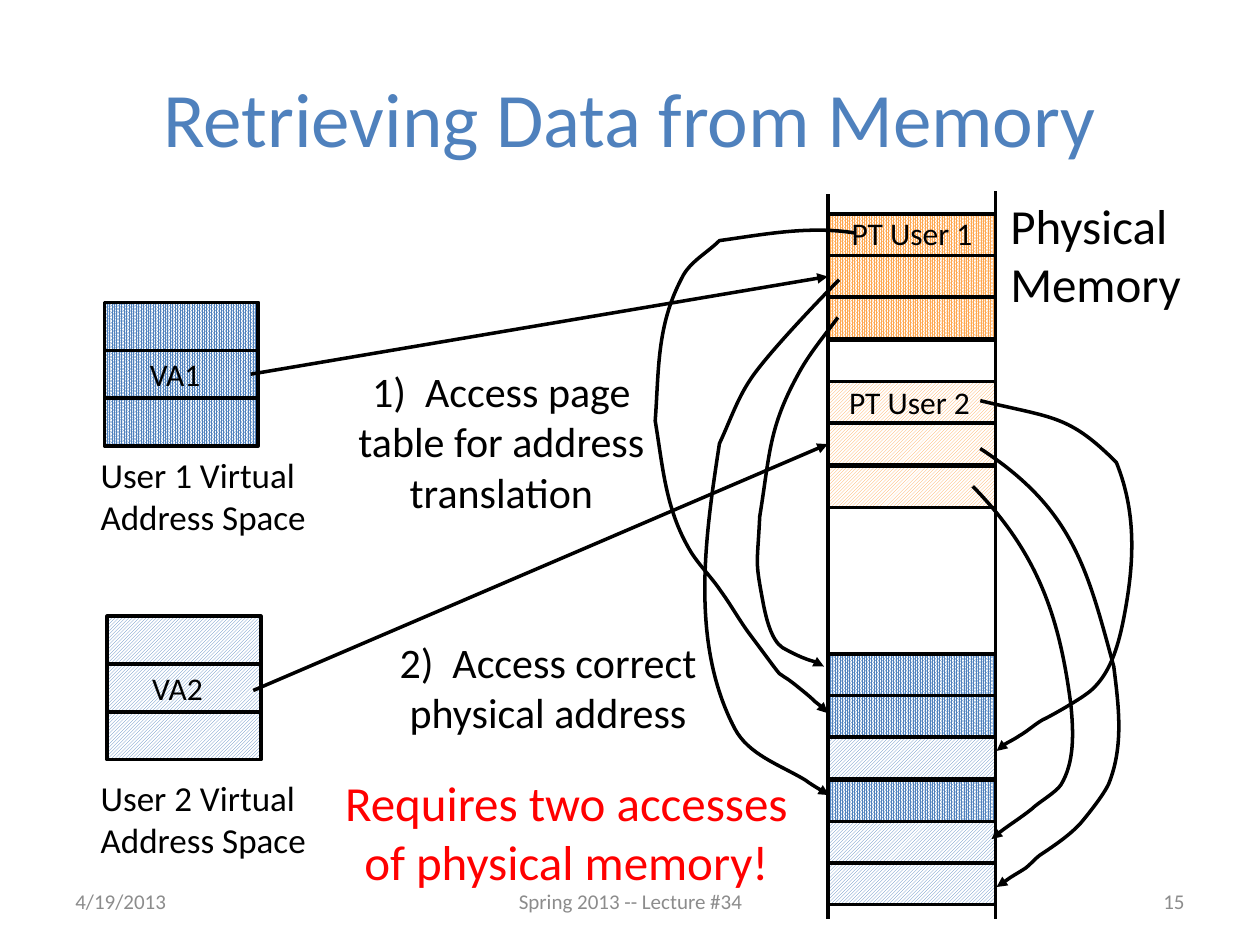
from lxml.etree import SubElement
from pptx import Presentation
from pptx.dml.color import RGBColor
from pptx.enum.dml import MSO_PATTERN
from pptx.enum.shapes import MSO_CONNECTOR, MSO_SHAPE
from pptx.enum.text import MSO_ANCHOR, PP_ALIGN
from pptx.oxml.ns import qn
from pptx.util import Pt

PX = 9144
FONT = "Calibri"
HUES = {
    "blue": "4F81BD",
    "orange": "FFA74F",
    "black": "000000",
    "white": "FFFFFF",
    "red": "FF0000",
    "gray": "8C8C8C",
}
DENSE = MSO_PATTERN.PERCENT_90
STRIPE = MSO_PATTERN.DARK_UPWARD_DIAGONAL
LEFT, MID, RIGHT = PP_ALIGN.LEFT, PP_ALIGN.CENTER, PP_ALIGN.RIGHT

RAM_X, RAM_W, CELL_H = 657, 133, 33
TABLES = [("orange", DENSE)] * 3 + [("white", None)] + [("orange", STRIPE)] * 3
PAGES = [("blue", kind) for kind in (DENSE, DENSE, STRIPE, DENSE, STRIPE, STRIPE)]

CURVES = [
    [(679, 185), (642, 179), (607, 186), (571, 191), (561, 201), (547, 208),
     (541, 221), (521, 259), (523, 294), (520, 334), (526, 370), (528, 402),
     (546, 434), (553, 447), (564, 457), (572, 469), (580, 480), (586, 491),
     (594, 502), (630, 550), (611, 527), (633, 545), (638, 549), (643, 553),
     (647, 557), (651, 560), (657, 566), (657, 566)],
    [(665, 252), (654, 267), (642, 281), (633, 298), (610, 340), (611, 361),
     (603, 410), (601, 451), (599, 443), (606, 480), (608, 490), (612, 508),
     (621, 514), (628, 518), (638, 523), (646, 525), (649, 526), (651, 527),
     (654, 529)],
    [(778, 356), (852, 404), (863, 452), (884, 529), (888, 561), (892, 592),
     (880, 622), (876, 631), (863, 647), (858, 653), (849, 663), (837, 671),
     (825, 679), (821, 682), (818, 686), (814, 689), (808, 693), (802, 696),
     (797, 700), (795, 701), (791, 704), (791, 704)],
    [(778, 318), (836, 332), (848, 329), (886, 367), (903, 409), (900, 451),
     (891, 495), (887, 514), (881, 534), (867, 547), (860, 554), (829, 571),
     (828, 571), (821, 575), (816, 580), (809, 584), (803, 588), (795, 591),
     (791, 596)],
    [(772, 386), (824, 439), (841, 490), (850, 560), (852, 581), (853, 605),
     (842, 623), (838, 629), (824, 637), (819, 642), (809, 650), (797, 657),
     (787, 666)],
    [(666, 222), (651, 237), (607, 283), (595, 302), (585, 317), (579, 335),
     (571, 352), (560, 424), (547, 509), (583, 578), (594, 599), (619, 607),
     (639, 619), (643, 622), (648, 625), (653, 628), (655, 629), (658, 631),
     (658, 631)],
]


def paint(name):
    return RGBColor.from_string(HUES[name])


def ink(shape, head=False):
    shape.line.width = Pt(2)
    shape.line.color.rgb = paint("black")
    if head:
        SubElement(shape.line._ln, qn("a:tailEnd"), type="triangle")


def style(frame, size, hue, align):
    for para in frame.paragraphs:
        para.alignment = align
        for run in para.runs:
            run.font.name = FONT
            run.font.size = Pt(size)
            run.font.color.rgb = paint(hue)


def label(slide, text, box, size, hue="black", align=LEFT, wrap=True, anchor=MSO_ANCHOR.TOP):
    frame = slide.shapes.add_textbox(*(n * PX for n in box)).text_frame
    frame.text = text
    frame.word_wrap = wrap
    frame.vertical_anchor = anchor
    style(frame, size, hue, align)


def block(slide, box, hue, kind=None):
    shape = slide.shapes.add_shape(MSO_SHAPE.RECTANGLE, *(n * PX for n in box))
    shape.shadow.inherit = False
    if kind is None:
        shape.fill.solid()
    else:
        shape.fill.patterned()
        shape.fill.pattern = kind
        shape.fill.back_color.rgb = paint("white")
    shape.fill.fore_color.rgb = paint(hue)
    ink(shape)
    return shape


def rule(slide, start, end, head=False):
    line = slide.shapes.add_connector(
        MSO_CONNECTOR.STRAIGHT, *(n * PX for n in start + end))
    ink(line, head)
    SubElement(line.element.spPr, qn("a:effectLst"))
    return line


def curve(slide, points):
    form = slide.shapes.build_freeform(*points[0], scale=PX)
    form.add_line_segments(points[1:], close=False)
    shape = form.convert_to_shape()
    shape.shadow.inherit = False
    shape.fill.background()
    ink(shape, True)
    track = next(shape.element.iter(qn("a:path")))
    steps = track.findall(qn("a:lnTo"))
    for i in range(0, len(steps), 3):
        bend = SubElement(track, qn("a:cubicBezTo"))
        for step in steps[i:i + 3]:
            bend.append(step[0])
            track.remove(step)


def stack(slide, top, cells):
    return [block(slide, (RAM_X, top + i * 100 // 3, RAM_W, CELL_H), hue, kind)
            for i, (hue, kind) in enumerate(cells)]


def space(slide, left, top, kind, name):
    block(slide, (left, top, 122, 114), "blue", kind)
    for i in (1, 2):
        y = top + 38 * i
        rule(slide, (left, y), (left + 122, y))
    label(slide, name, (left + 26, top + 37, 61, 40), 18, wrap=False)


def main():
    deck = Presentation()
    deck.slide_width, deck.slide_height = 1000 * PX, 750 * PX
    slide = deck.slides.add_slide(deck.slide_layouts[5])

    title = slide.shapes.title
    title.left, title.top, title.width, title.height = (
        n * PX for n in (50, 30, 900, 125))
    title.text_frame.text = "Retrieving Data from Memory"
    title.text_frame.vertical_anchor = MSO_ANCHOR.MIDDLE
    style(title.text_frame, 44, "blue", MID)

    for text, left, width, align in (
        ("4/19/2013", 50, 233, LEFT),
        ("Spring 2013 -- Lecture #34", 342, 317, MID),
        ("15", 717, 233, RIGHT),
    ):
        label(slide, text, (left, 695, width, 40), 12, "gray", align,
              anchor=MSO_ANCHOR.MIDDLE)

    space(slide, 83, 240, DENSE, "VA1")
    space(slide, 85, 489, STRIPE, "VA2")
    label(slide, "User 1 Virtual Address Space", (70, 355, 194, 77), 20)
    label(slide, "User 2 Virtual Address Space", (70, 611, 205, 77), 20)

    rule(slide, (RAM_X, 154), (RAM_X, 729))
    rule(slide, (RAM_X + RAM_W, 152), (RAM_X + RAM_W, 729))
    stack(slide, 519, PAGES)
    cells = stack(slide, 170, TABLES)
    label(slide, "PT User 1", (666, 165, 141, 40), 18)
    label(slide, "PT User 2", (664, 299, 141, 40), 18)

    for start, end, cell in (
        ((199, 297), (657, 220), cells[1]),
        ((201, 548), (657, 353), cells[5]),
    ):
        rule(slide, start, end, True).end_connect(cell, 1)
    for points in CURVES:
        curve(slide, points)

    label(slide, "1)  Access page table for address translation",
          (271, 285, 254, 131), 24, align=MID)
    label(slide, "Physical Memory", (792, 150, 158, 104), 28)
    label(slide, "2)  Access correct physical address",
          (303, 500, 264, 91), 24, align=MID)
    label(slide, "Requires two accesses of physical memory!",
          (253, 608, 393, 104), 28, "red", MID)
    deck.save("out.pptx")


if __name__ == "__main__":
    main()
